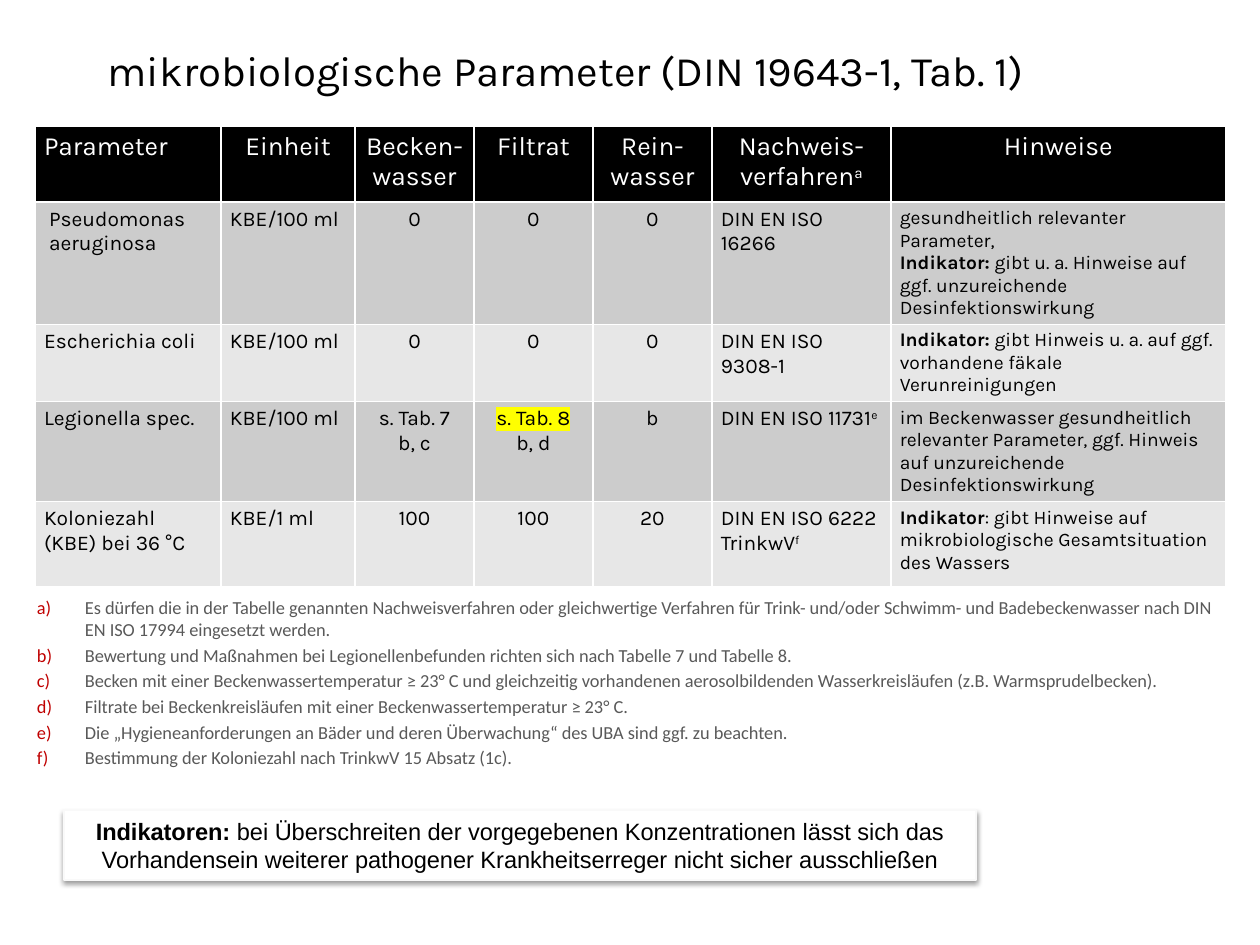
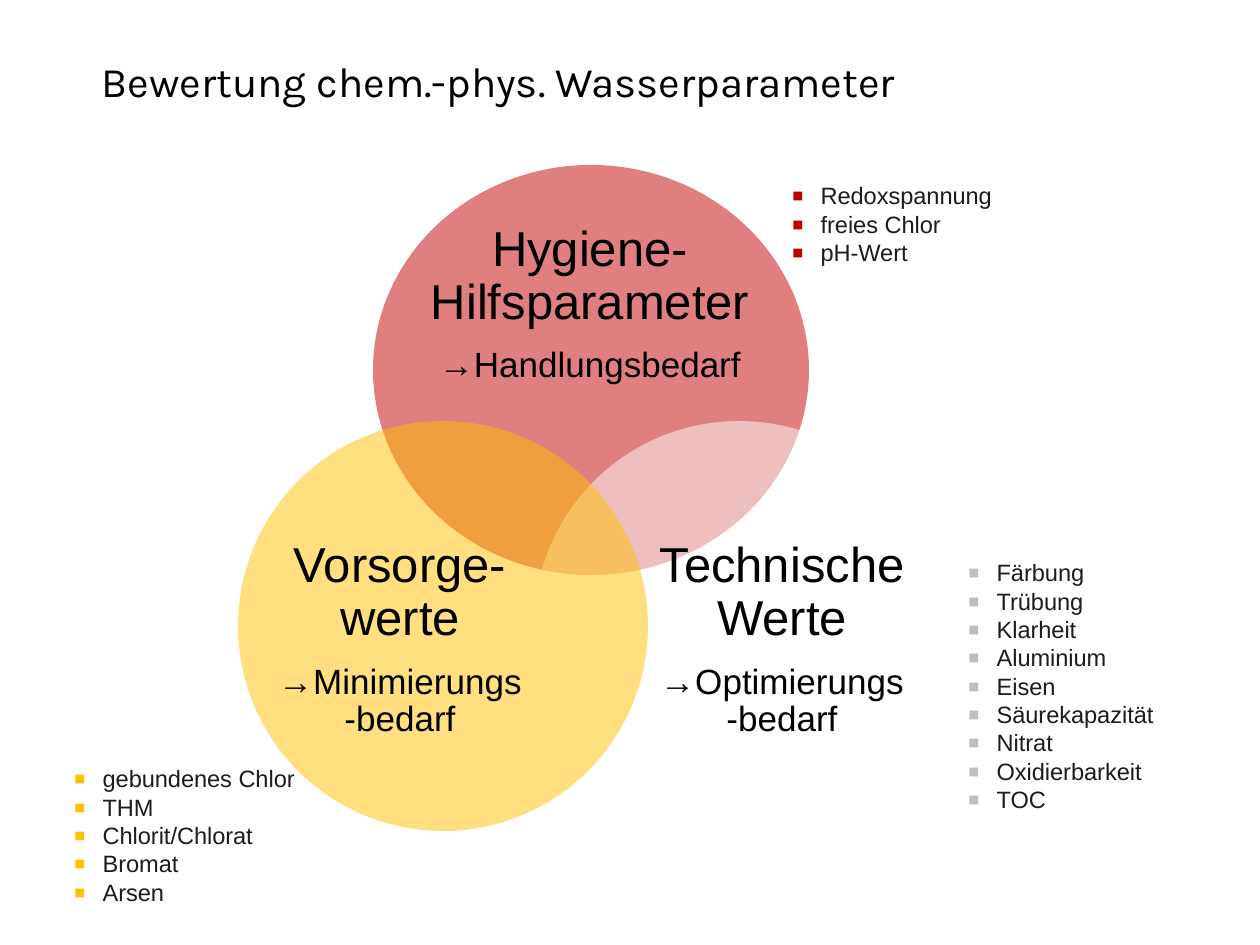
from lxml.etree import SubElement
from pptx import Presentation
from pptx.dml.color import RGBColor
from pptx.enum.shapes import MSO_SHAPE
from pptx.enum.text import MSO_ANCHOR, MSO_AUTO_SIZE, PP_ALIGN
from pptx.oxml import parse_xml
from pptx.oxml.ns import nsdecls, qn
from pptx.util import Emu, Pt

COLORS = {
    "black": "000000",
    "white": "FFFFFF",
    "dark_row": "CCCCCC",
    "light_row": "E7E7E7",
    "red": "C00000",
    "yellow": "FFC000",
    "gray": "BFBFBF",
    "note_text": "595959",
    "list_text": "1C1C1C",
    "box_line": "F9F9F9",
    "highlight": "FFFF00",
}
LEFT, CENTER = PP_ALIGN.LEFT, PP_ALIGN.CENTER


def px(length):
    return Emu(round(length * 914400 / 126))


def rgb(name):
    return RGBColor.from_string(COLORS[name])


def color_xml(name):
    return f'<a:srgbClr {nsdecls("a")} val="{COLORS[name]}"/>'


class Deck:
    title_font, table_font, note_font, text_font = "Karla", "Karla", "Calibri", "Arial"

    def __init__(self):
        self.presentation = Presentation()
        self.presentation.slide_width = px(1260)
        self.presentation.slide_height = px(945)
        self.slide = None

    def new_slide(self, layout, title, box):
        self.slide = self.presentation.slides.add_slide(self.presentation.slide_layouts[layout])
        shape = self.slide.shapes.title
        self.place(shape, box)
        shape.text_frame.vertical_anchor = MSO_ANCHOR.BOTTOM
        self.set_text(shape.text_frame.paragraphs[0], title, 24, self.title_font)
        self.bodies = [item for item in self.slide.placeholders if item.placeholder_format.idx > 0]

    def place(self, shape, box):
        shape.left, shape.top, shape.width, shape.height = map(px, box)
        shape.text_frame.auto_size = MSO_AUTO_SIZE.NONE
        shape.text_frame.word_wrap = True

    def set_text(self, paragraph, content, size, font, color="black", align=LEFT):
        if isinstance(content, str):
            paragraph.text = content
            marks = [""] * len(paragraph.runs)
        else:
            for text, _ in content:
                paragraph.add_run().text = text
            marks = [mark for _, mark in content]
        paragraph.alignment = align
        for run, mark in zip(paragraph.runs, marks):
            run.font.size = Pt(size)
            run.font.name = font
            run.font.color.rgb = rgb(color)
            run.font.bold = mark == "bold"
            properties = run.font._element
            if mark == "superscript":
                properties.set("baseline", "30000")
            if mark == "highlight":
                properties.find(qn("a:solidFill")).addnext(parse_xml(
                    f'<a:highlight {nsdecls("a")}>{color_xml("highlight")}</a:highlight>'))

    def paragraphs(self, text_frame, count):
        for _ in range(count - 1):
            text_frame.add_paragraph()
        return text_frame.paragraphs

    def bullet_list(self, items, box, size, font, color, bullet_color, indent, bullet, gap=0):
        shape = self.bodies.pop(0)
        self.place(shape, box)
        shape.text_frame.vertical_anchor = MSO_ANCHOR.TOP
        for index, (paragraph, item) in enumerate(
                zip(self.paragraphs(shape.text_frame, len(items)), items)):
            properties = paragraph._p.get_or_add_pPr()
            properties.set("marL", str(px(indent)))
            properties.set("indent", str(px(-indent)))
            properties.append(parse_xml(
                f'<a:buClr {nsdecls("a")}>{color_xml(bullet_color)}</a:buClr>'))
            for tag, attributes in bullet:
                SubElement(properties, qn(tag), attributes)
            paragraph.space_before = Pt(gap if index else 0)
            self.set_text(paragraph, item, size, font, color)
        return shape.text_frame

    def square_list(self, items, box, bullet_color):
        bullet = [("a:buSzPct", {"val": "150000"}), ("a:buFont", {"typeface": self.text_font}),
                  ("a:buChar", {"char": "▪"})]
        self.bullet_list(items, box, 13.5, self.text_font, "list_text", bullet_color, 29, bullet)

    def lettered_notes(self, items, box):
        bullet = [("a:buFont", {"typeface": self.note_font}),
                  ("a:buAutoNum", {"type": "alphaLcParenR"})]
        text_frame = self.bullet_list(
            items, box, 10.5, self.note_font, "note_text", "red", 48, bullet, 2.1)
        text_frame.margin_left = text_frame.margin_right = px(9)
        text_frame.margin_top = text_frame.margin_bottom = px(5)

    def remove_unused(self):
        for shape in self.bodies:
            shape._element.getparent().remove(shape._element)

    def cell(self, cell, paragraphs, size, color, fill, align):
        cell.margin_left = cell.margin_right = px(9)
        cell.margin_top = cell.margin_bottom = px(5)
        for side in ("lnL", "lnR", "lnT", "lnB"):
            cell._tc.get_or_add_tcPr().append(parse_xml(
                f'<a:{side} {nsdecls("a")} w="12700"><a:solidFill>{color_xml("white")}'
                f'</a:solidFill></a:{side}>'))
        cell.fill.solid()
        cell.fill.fore_color.rgb = rgb(fill)
        for paragraph, content in zip(self.paragraphs(cell.text_frame, len(paragraphs)), paragraphs):
            self.set_text(paragraph, content, size, self.table_font, color, align)

    def table(self, header, rows, left, top, widths, heights):
        table = self.slide.shapes.add_table(
            len(heights), len(widths), px(left), px(top), px(sum(widths)), px(sum(heights))).table
        for column, width in zip(table.columns, widths):
            column.width = px(width)
        for row, height in zip(table.rows, heights):
            row.height = px(height)
        for index, content in enumerate(header):
            self.cell(table.cell(0, index), [content], 15, "white", "black",
                      CENTER if index else LEFT)
        last = len(widths) - 1
        for row_index, row in enumerate(rows, 1):
            fill = "dark_row" if row_index % 2 else "light_row"
            for index, content in enumerate(row):
                paragraphs = content if isinstance(content, list) else [content]
                self.cell(table.cell(row_index, index), paragraphs, 11 if index == last else 12,
                          "black", fill, CENTER if index in (2, 3, 4) else LEFT)
        return table

    def shape(self, kind, box, fill):
        shape = self.slide.shapes.add_shape(kind, *map(px, box))
        shape.shadow.inherit = False
        shape.fill.solid()
        shape.fill.fore_color.rgb = rgb(fill)
        shape.line.fill.background()
        return shape

    def callout(self, content, box):
        shape = self.shape(MSO_SHAPE.RECTANGLE, box, "white")
        shape.line.color.rgb = rgb("box_line")
        shape.line.width = Pt(0.75)
        shape._element.spPr.find(qn("a:effectLst")).append(parse_xml(
            f'<a:outerShdw {nsdecls("a")} blurRad="{Pt(3.1)}" dist="{Pt(1.6)}" dir="5400000" '
            f'rotWithShape="0"><a:srgbClr val="{COLORS["black"]}"><a:alpha val="38000"/>'
            '</a:srgbClr></a:outerShdw>'))
        shape.text_frame.word_wrap = True
        self.set_text(shape.text_frame.paragraphs[0], content, 13.5, self.text_font, align=CENTER)

    def circle(self, box, fill):
        shape = self.shape(MSO_SHAPE.OVAL, box, fill)
        color = shape._element.spPr.find(qn("a:solidFill")).find(qn("a:srgbClr"))
        SubElement(color, qn("a:alpha"), {"val": "50000"})

    def circle_label(self, heading, action, box):
        text_frame = self.slide.shapes.add_textbox(*map(px, box)).text_frame
        text_frame.word_wrap = True
        text_frame.vertical_anchor = MSO_ANCHOR.MIDDLE
        text_frame.margin_left = text_frame.margin_right = 0
        text_frame.margin_top = text_frame.margin_bottom = 0
        for paragraph, text, size in zip(self.paragraphs(text_frame, 2), (heading, action), (28, 20)):
            paragraph.line_spacing = 0.9
            self.set_text(paragraph, text, size, self.text_font, align=CENTER)
        text_frame.paragraphs[0].space_after = Pt(10)


def microbiology_slide(deck):
    deck.new_slide(1, "mikrobiologische Parameter (DIN 19643-1, Tab. 1)", (95, 27, 1073, 74))
    header = ["Parameter", "Einheit", "Becken-wasser", "Filtrat", "Rein-wasser",
              [("Nachweis- verfahren", ""), ("a", "superscript")], "Hinweise"]
    rows = [
        [["Pseudomonas", "aeruginosa"], "KBE/100 ml", "0", "0", "0", "DIN EN ISO 16266",
         ["gesundheitlich relevanter Parameter,",
          [("Indikator:", "bold"),
           (" gibt u. a. Hinweise auf ggf. unzureichende Desinfektionswirkung", "")]]],
        ["Escherichia coli", "KBE/100 ml", "0", "0", "0", "DIN EN ISO 9308-1",
         [[("Indikator:", "bold"), (" gibt Hinweis u. a. auf ggf.", "")],
          "vorhandene fäkale Verunreinigungen"]],
        ["Legionella spec.", "KBE/100 ml", ["s. Tab. 7", "b, c"],
         [[("s. Tab. 8", "highlight")], "b, d"], "b",
         [[("DIN EN ISO 11731", ""), ("e", "superscript")]],
         "im Beckenwasser gesundheitlich relevanter Parameter, ggf. Hinweis auf "
         "unzureichende Desinfektionswirkung"],
        ["Koloniezahl (KBE) bei 36 °C", "KBE/1 ml", "100", "100", "20",
         ["DIN EN ISO 6222", [("TrinkwV", ""), ("f", "superscript")]],
         [[("Indikator", "bold"),
           (": gibt Hinweise auf mikrobiologische Gesamtsituation des Wassers", "")]]],
    ]
    table = deck.table(header, rows, 35, 126, [186, 134, 119, 119, 119, 179, 335],
                       [76, 121, 77, 99, 85])
    table.cell(1, 0).margin_left = px(14)
    deck.lettered_notes([
        "Es dürfen die in der Tabelle genannten Nachweisverfahren oder gleichwertige Verfahren für "
        "Trink- und/oder Schwimm- und Badebeckenwasser nach DIN EN ISO 17994 eingesetzt werden.",
        "Bewertung und Maßnahmen bei Legionellenbefunden richten sich nach Tabelle 7 und Tabelle 8.",
        "Becken mit einer Beckenwassertemperatur ≥ 23° C und gleichzeitig vorhandenen "
        "aerosolbildenden Wasserkreisläufen (z.B. Warmsprudelbecken).",
        "Filtrate bei Beckenkreisläufen mit einer Beckenwassertemperatur ≥ 23° C.",
        "Die „Hygieneanforderungen an Bäder und deren Überwachung“ des UBA sind ggf. zu beachten.",
        "Bestimmung der Koloniezahl nach TrinkwV 15 Absatz (1c).",
    ], (28, 591, 1198, 189))
    deck.callout([
        ("Indikatoren: ", "bold"),
        ("bei Überschreiten der vorgegebenen Konzentrationen lässt sich das Vorhandensein "
         "weiterer pathogener Krankheitserreger nicht sicher ausschließen", ""),
    ], (64, 810, 912, 70))


def assessment_slide(deck):
    deck.new_slide(4, "Bewertung chem.-phys. Wasserparameter", (89, 38, 833, 74))
    deck.circle((373, 165, 436, 410), "red")
    deck.circle((534, 421, 410, 410), "white")
    deck.circle((238, 421, 410, 410), "yellow")
    deck.circle_label("Hygiene-\vHilfsparameter", "→Handlungsbedarf", (425, 227, 330, 155))
    deck.circle_label("Technische\vWerte", "→Optimierungs\v-bedarf", (659, 527, 246, 226))
    deck.circle_label("Vorsorge-\vwerte", "→Minimierungs\v-bedarf", (277, 527, 246, 226))
    deck.square_list(["Redoxspannung", "freies Chlor", "pH-Wert"], (779, 175, 229, 98), "red")
    deck.square_list(["gebundenes Chlor", "THM", "Chlorit/Chlorat", "Bromat", "Arsen"],
                     (61, 758, 266, 156), "yellow")
    deck.square_list(["Färbung", "Trübung", "Klarheit", "Aluminium", "Eisen", "Säurekapazität",
                      "Nitrat", "Oxidierbarkeit", "TOC"], (955, 552, 224, 271), "gray")
    deck.remove_unused()


def main():
    deck = Deck()
    microbiology_slide(deck)
    assessment_slide(deck)
    deck.presentation.save("out.pptx")


if __name__ == "__main__":
    main()
